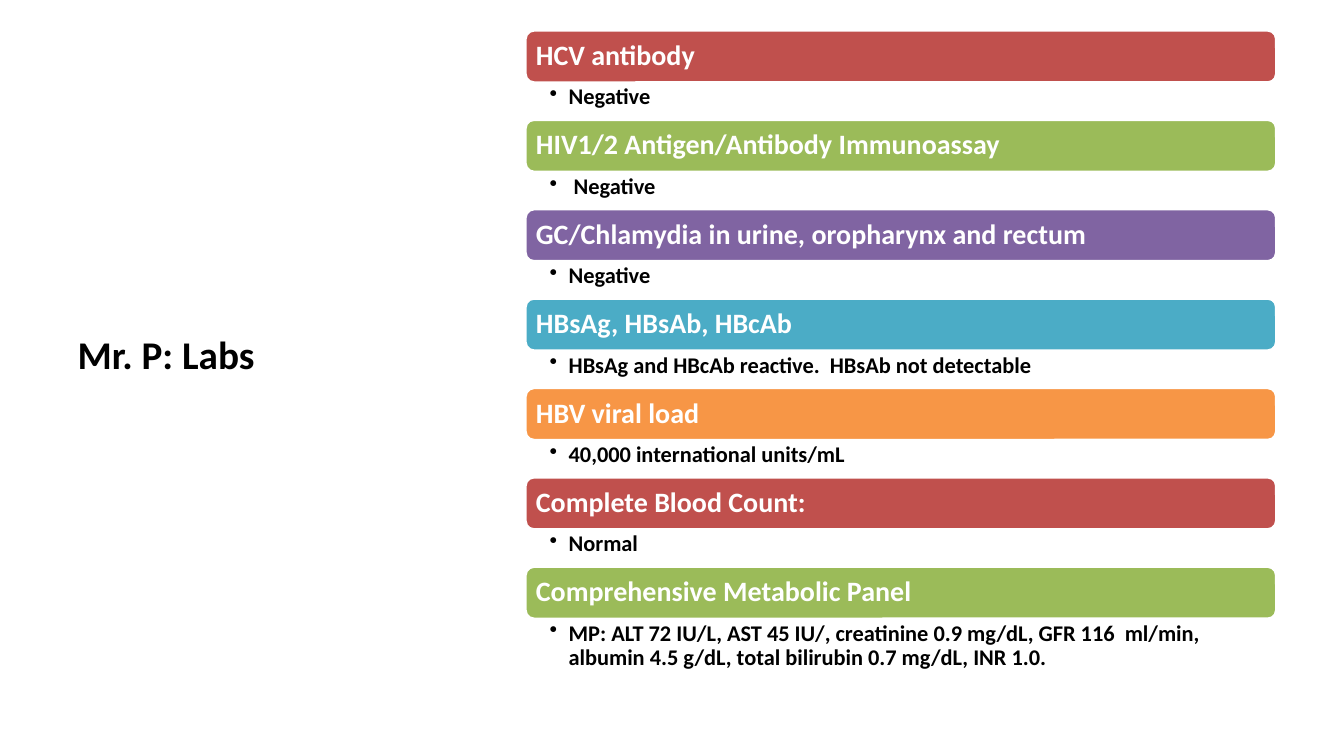
from dataclasses import dataclass

import lxml.etree
import pptx
import pptx.dml.color
import pptx.enum.shapes
import pptx.enum.text
import pptx.oxml.ns
import pptx.shapes.autoshape
import pptx.slide
import pptx.text.text
import pptx.util

Inches = pptx.util.Inches
Pt = pptx.util.Pt
RGBColor = pptx.dml.color.RGBColor

BLACK = RGBColor(0x00, 0x00, 0x00)
WHITE = RGBColor(0xFF, 0xFF, 0xFF)
RED = RGBColor(0xC0, 0x50, 0x4D)
GREEN = RGBColor(0x9B, 0xBB, 0x59)
PURPLE = RGBColor(0x80, 0x64, 0xA2)
TEAL = RGBColor(0x4B, 0xAC, 0xC6)
ORANGE = RGBColor(0xF7, 0x96, 0x46)
BAR_COLORS = (RED, GREEN, PURPLE, TEAL, ORANGE)

FONT_NAME = "Calibri"
LIST_LEFT = 5.21
LIST_TOP = 0.3
LIST_WIDTH = 7.45
BAR_HEIGHT = 0.52
RESULT_LINE_HEIGHT = 0.36
LAST_RESULT_HEIGHT = 0.55
ROW_PITCH = 5.32 / 6
BULLET_INDENT = 0.19


@dataclass(frozen=True)
class LabTest:
    name: str
    result: str
    result_height: float = RESULT_LINE_HEIGHT


LAB_TESTS = (
    LabTest("HCV antibody", "Negative"),
    LabTest("HIV1/2 Antigen/Antibody Immunoassay", " Negative"),
    LabTest("GC/Chlamydia in urine, oropharynx and rectum", "Negative"),
    LabTest("HBsAg, HBsAb, HBcAb", "HBsAg and HBcAb reactive.  HBsAb not detectable"),
    LabTest("HBV viral load", "40,000 international units/mL"),
    LabTest("Complete Blood Count:", "Normal"),
    LabTest(
        "Comprehensive Metabolic Panel",
        "MP: ALT 72 IU/L, AST 45 IU/, creatinine 0.9 mg/dL, GFR 116  ml/min, "
        "albumin 4.5 g/dL, total bilirubin 0.7 mg/dL, INR 1.0.",
        LAST_RESULT_HEIGHT,
    ),
)


def write_text(
    shape: pptx.shapes.autoshape.Shape,
    text: str,
    size: float,
    color: RGBColor,
    anchor: pptx.enum.text.MSO_ANCHOR,
    insets: tuple[float, float, float, float],
) -> pptx.text.text._Paragraph:
    frame = shape.text_frame
    frame.word_wrap = True
    frame.auto_size = pptx.enum.text.MSO_AUTO_SIZE.NONE
    frame.vertical_anchor = anchor
    left, top, right, bottom = insets
    frame.margin_left = Inches(left)
    frame.margin_top = Inches(top)
    frame.margin_right = Inches(right)
    frame.margin_bottom = Inches(bottom)
    paragraph = frame.paragraphs[0]
    paragraph.text = text
    paragraph.alignment = pptx.enum.text.PP_ALIGN.LEFT
    paragraph.font.name = FONT_NAME
    paragraph.font.size = Pt(size)
    paragraph.font.bold = True
    paragraph.font.color.rgb = color
    return paragraph


def add_bullet(paragraph: pptx.text.text._Paragraph) -> None:
    properties = paragraph._p.get_or_add_pPr()
    properties.set("marL", str(Inches(BULLET_INDENT)))
    properties.set("indent", str(-Inches(BULLET_INDENT)))
    bullet = lxml.etree.SubElement(properties, pptx.oxml.ns.qn("a:buChar"))
    bullet.set("char", "•")
    defaults = properties.find(pptx.oxml.ns.qn("a:defRPr"))
    if defaults is not None:
        properties.append(defaults)


def add_title(slide: pptx.slide.Slide) -> None:
    title = slide.shapes.title
    title.left, title.top = Inches(0.67), Inches(1.57)
    title.width, title.height = Inches(4.39), Inches(5.13)
    write_text(
        title, "Mr. P: Labs", 28, BLACK,
        pptx.enum.text.MSO_ANCHOR.TOP, (0.1, 1.71, 0.1, 0.05),
    )


def add_lab_test(
    slide: pptx.slide.Slide, lab_test: LabTest, top: float, color: RGBColor
) -> None:
    bar = slide.shapes.add_shape(
        pptx.enum.shapes.MSO_SHAPE.ROUNDED_RECTANGLE,
        Inches(LIST_LEFT), Inches(top), Inches(LIST_WIDTH), Inches(BAR_HEIGHT),
    )
    bar.shadow.inherit = False
    bar.fill.solid()
    bar.fill.fore_color.rgb = color
    bar.line.color.rgb = WHITE
    bar.line.width = Pt(2)
    heading = write_text(
        bar, lab_test.name, 20, WHITE,
        pptx.enum.text.MSO_ANCHOR.MIDDLE, (0.08, 0.08, 0.08, 0.08),
    )
    heading.line_spacing = 0.9

    result_box = slide.shapes.add_textbox(
        Inches(LIST_LEFT), Inches(top + BAR_HEIGHT),
        Inches(LIST_WIDTH), Inches(lab_test.result_height),
    )
    result = write_text(
        result_box, lab_test.result, 16, BLACK,
        pptx.enum.text.MSO_ANCHOR.TOP, (0.24, 0.03, 0.16, 0.03),
    )
    result.line_spacing = 0.9
    add_bullet(result)


def main() -> None:
    presentation = pptx.Presentation()
    presentation.slide_width = Inches(13.33)
    presentation.slide_height = Inches(7.5)
    slide = presentation.slides.add_slide(
        presentation.slide_layouts.get_by_name("Title Only")
    )
    add_title(slide)
    for row, lab_test in enumerate(LAB_TESTS):
        color = BAR_COLORS[row % len(BAR_COLORS)]
        add_lab_test(slide, lab_test, LIST_TOP + row * ROW_PITCH, color)
    presentation.save("out.pptx")


if __name__ == "__main__":
    main()
